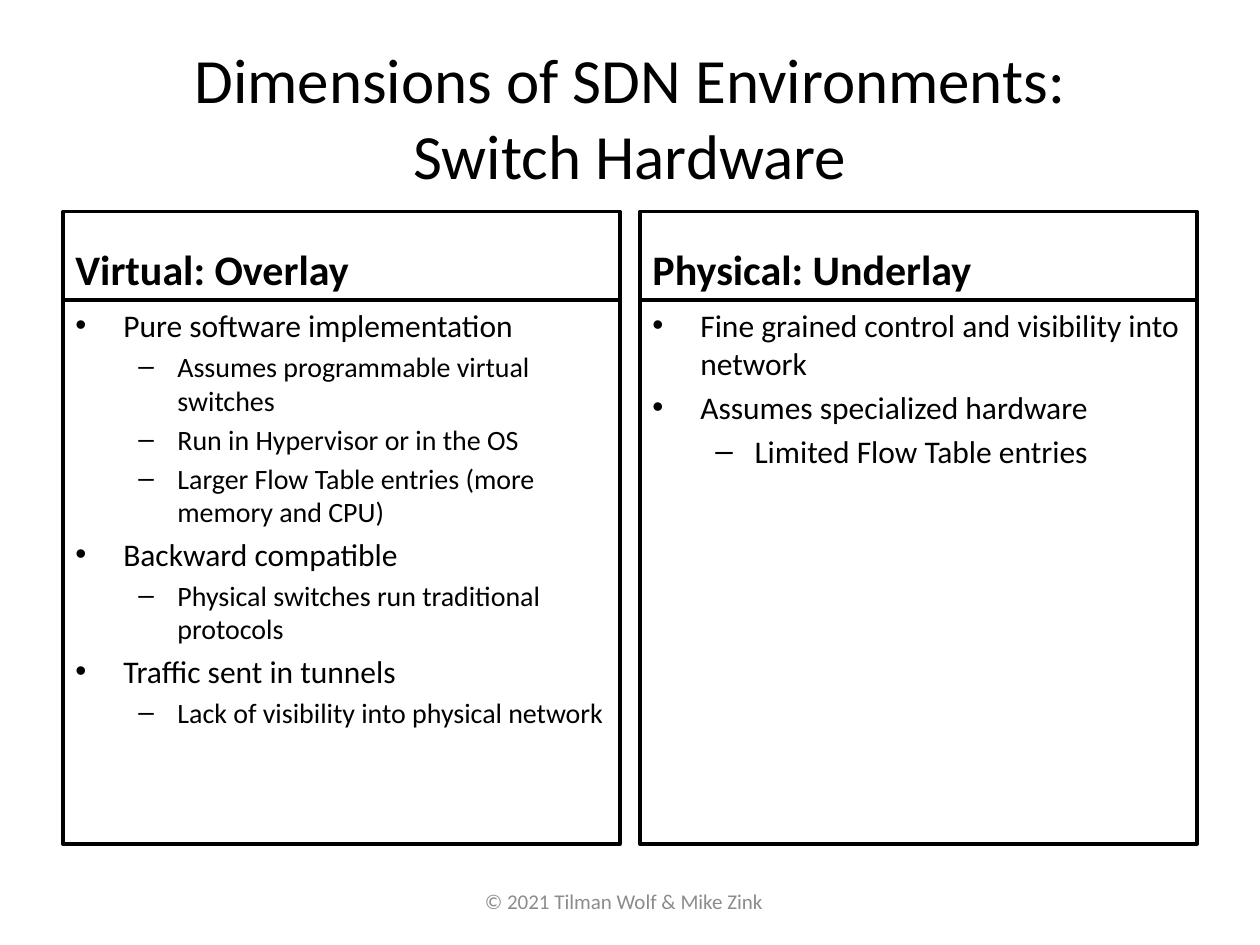
import pptx
import pptx.util
import pptx.dml.color
import pptx.enum.shapes
import pptx.enum.text
import pptx.oxml.ns
import lxml.etree

Inches = pptx.util.Inches
Anchor = pptx.enum.text.MSO_ANCHOR
Align = pptx.enum.text.PP_ALIGN

BULLETS = [("•", 0.38, 0.38), ("–", 0.81, 0.31)]
COLUMNS = [
    ("Virtual: Overlay", [
        (0, 18, "Pure software implementation"),
        (1, 16, "Assumes programmable virtual switches"),
        (1, 16, "Run in Hypervisor or in the OS"),
        (1, 16, "Larger Flow Table entries (more memory and CPU)"),
        (0, 18, "Backward compatible"),
        (1, 16, "Physical switches run traditional protocols"),
        (0, 18, "Traffic sent in tunnels"),
        (1, 16, "Lack of visibility into physical network"),
    ]),
    ("Physical: Underlay", [
        (0, 18, "Fine grained control and visibility into network"),
        (0, 18, "Assumes specialized hardware"),
        (1, 18, "Limited Flow Table entries"),
    ]),
]


def color(value):
    return pptx.dml.color.RGBColor.from_string(value)


def apply(target, values):
    for name, value in values.items():
        setattr(target, name, value)


def add_span(para, text, size, shade="000000", bold=False):
    span = para.add_run()
    span.text = text
    apply(span.font, {"name": "Calibri", "size": pptx.util.Pt(size), "bold": bold})
    span.font.color.rgb = color(shade)


def add_bullet(para, level):
    symbol, margin, hanging = BULLETS[level]
    para.level = level
    properties = para._p.get_or_add_pPr()
    properties.set("marL", str(Inches(margin)))
    properties.set("indent", str(-Inches(hanging)))
    font = lxml.etree.SubElement(properties, pptx.oxml.ns.qn("a:buFont"))
    font.set("typeface", "Arial")
    bullet = lxml.etree.SubElement(properties, pptx.oxml.ns.qn("a:buChar"))
    bullet.set("char", symbol)


def add_title(page, left, top, width, height, lines):
    box = page.shapes.add_textbox(*map(Inches, (left, top, width, height)))
    apply(box.text_frame, {"word_wrap": True, "vertical_anchor": Anchor.MIDDLE})
    para = box.text_frame.paragraphs[0]
    para.alignment = Align.CENTER
    for index, line in enumerate(lines):
        if index:
            para.add_line_break()
        add_span(para, line, 36)


def add_panel(page, left, top, width, height, anchor):
    box = page.shapes.add_shape(
        pptx.enum.shapes.MSO_SHAPE.RECTANGLE, *map(Inches, (left, top, width, height)))
    box.shadow.inherit = False
    box.fill.solid()
    box.fill.fore_color.rgb = color("FFFFFF")
    box.line.color.rgb = color("000000")
    box.line.width = pptx.util.Pt(2)
    apply(box.text_frame, {"word_wrap": True, "vertical_anchor": anchor})
    return box.text_frame


def add_column(page, left, top, width, height, heading, items):
    header = 0.7
    frame = add_panel(page, left, top, width, header, Anchor.BOTTOM)
    para = frame.paragraphs[0]
    apply(para, {"alignment": Align.LEFT, "space_before": pptx.util.Pt(4.8)})
    add_span(para, heading, 24, bold=True)
    frame = add_panel(page, left, top + header, width, height - header, Anchor.TOP)
    for index, (level, size, text) in enumerate(items):
        para = frame.add_paragraph() if index else frame.paragraphs[0]
        apply(para, {"alignment": Align.LEFT, "space_before": pptx.util.Pt(size * 0.2)})
        add_bullet(para, level)
        add_span(para, text, size)


def add_footer(page, left, top, width, height, text):
    box = page.shapes.add_textbox(*map(Inches, (left, top, width, height)))
    box.text_frame.word_wrap = False
    add_span(box.text_frame.paragraphs[0], text, 12, "8C8C8C")


def main():
    deck = pptx.Presentation()
    apply(deck, {"slide_width": Inches(10), "slide_height": Inches(7.5)})
    page = deck.slides.add_slide(deck.slide_layouts[6])
    add_footer(page, 3.75, 7, 2.44, 0.5, "© 2021 Tilman Wolf & Mike Zink")
    add_title(page, 0.5, 0.3, 9, 1.25,
              ["Dimensions of SDN Environments:", "Switch Hardware"])
    margin, width = 0.5, 4.42
    step = 10 - 2 * margin - width
    for index, (heading, items) in enumerate(COLUMNS):
        add_column(page, margin + index * step, 1.68, width, 5.02, heading, items)
    deck.save("out.pptx")


if __name__ == "__main__":
    main()
